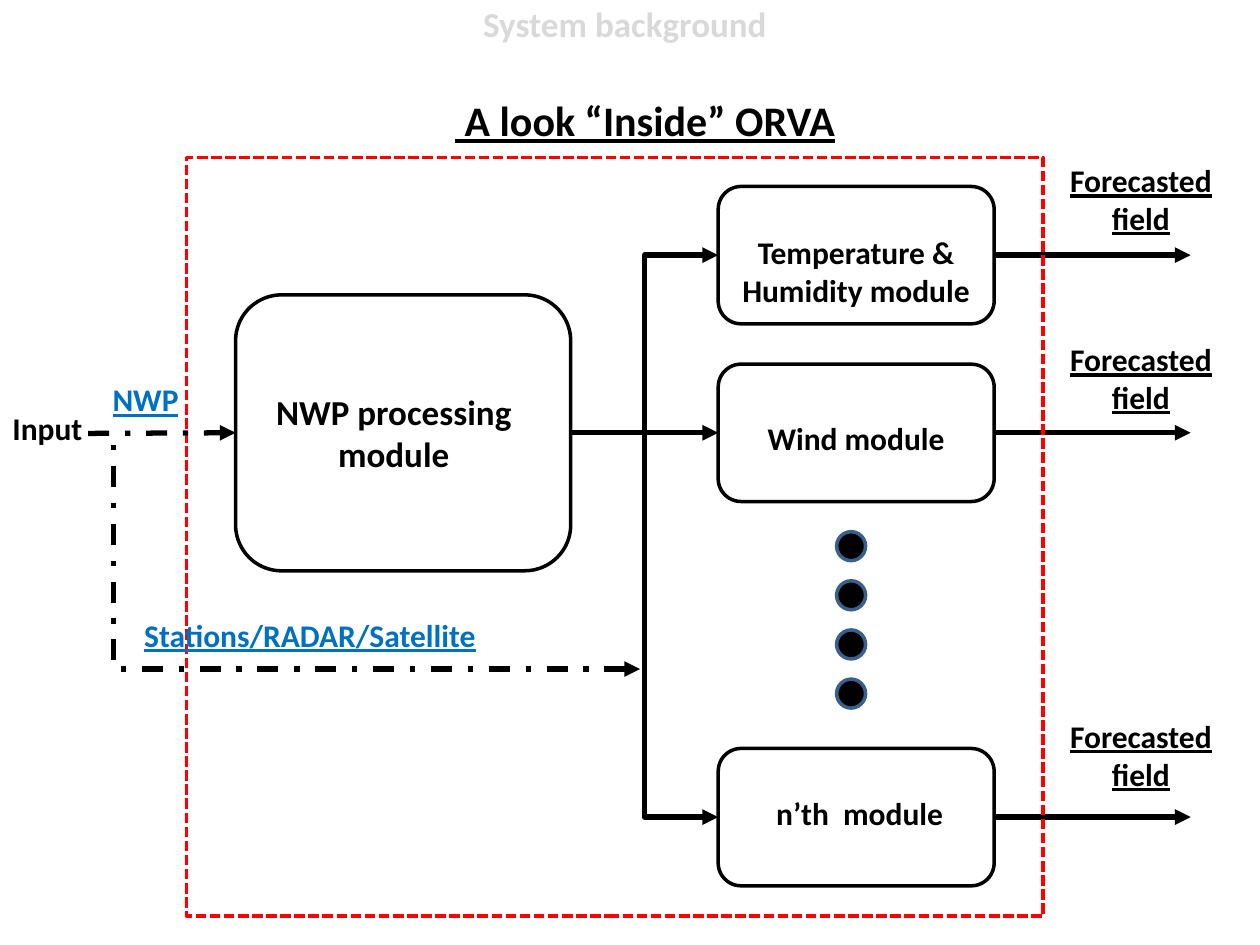
import pptx
import pptx.util
import pptx.dml.color
import pptx.enum.dml
import pptx.enum.shapes
import pptx.enum.text
import pptx.oxml
import pptx.oxml.ns
from pptx.util import Inches

SHAPE = pptx.enum.shapes.MSO_SHAPE
CONNECTOR = pptx.enum.shapes.MSO_CONNECTOR
DASH = pptx.enum.dml.MSO_LINE
ALIGN = pptx.enum.text.PP_ALIGN

THEME = {
    "font": "Calibri",
    "ink": "000000", "paper": "FFFFFF", "input": "0070C0",
    "frame": "FF0000", "dot_edge": "3A5F8C", "header": "D9D9D9",
    "title_size": 24, "large": 20, "body": 18,
    "outline": 2, "arrow": 3,
}

# Text, then left, top, width, height in inches
TITLE = (" A look “Inside” ORVA", (3.01, 0.7, 4.22, 0.5))
HEADER = ("System background", (3.11, -0.03, 3.7, 0.44))
PROCESSING = ("NWP processing module", (2.03, 3.05, 2.19, 0.77))
INPUT = ("Input", (0, 3.2, 0.78, 0.4))
SOURCES = [
    ("Stations/RADAR/Satellite", (0.7, 4.84, 3.52, 0.4)),
    ("NWP", (0.78, 2.97, 0.75, 0.4)),
]
# Text, box top, label top, label height, top of the output label
MODULES = [
    ("Temperature & Humidity module ", 1.48, 1.8, 0.71, 1.23),
    ("Wind module", 2.89, 3.28, 0.4, 2.65),
    (" n’th  module", 5.94, 6.25, 0.4, 5.64),
]
OUTPUT = "Forecasted field"

PROCESSING_BOX = (1.87, 2.34, 2.66, 2.19)
FRAME = (1.48, 1.25, 6.8, 6.02)
MODULE_LEFT, MODULE_WIDTH, MODULE_HEIGHT = 5.7, 2.19, 1.09
LABEL_LEFT, LABEL_WIDTH = 5.78, 2.03
OUTPUT_LEFT, OUTPUT_WIDTH, OUTPUT_HEIGHT = 8.39, 1.33, 0.71
OUTPUT_END = 9.45
INPUT_START = (0.7, 3.44)
STATIONS_END = (5.08, 5.31)
STATIONS_BEND = 0.046
DOT_LEFT, DOT_TOP, DOT_SIZE, DOT_STEP, DOT_COUNT = 6.64, 4.22, 0.23, 0.39, 4
LEFT_SITE, RIGHT_SITE = 1, 3


def color(name):
    return pptx.dml.color.RGBColor.from_string(THEME[name])


def inches(values):
    return [Inches(value) for value in values]


def add_box(slide, kind, area, fill, line, dash=None):
    shape = slide.shapes.add_shape(kind, *inches(area))
    shape.shadow.inherit = False
    if fill:
        shape.fill.solid()
        shape.fill.fore_color.rgb = color(fill)
    else:
        shape.fill.background()
    shape.line.color.rgb = color(line)
    shape.line.width = pptx.util.Pt(THEME["outline"])
    if dash:
        shape.line.dash_style = dash
    return shape


def write(shape, text, size="body", ink="ink", underline=False, align=ALIGN.CENTER):
    frame = shape.text_frame
    frame.word_wrap = True
    frame.auto_size = pptx.enum.text.MSO_AUTO_SIZE.NONE
    frame.vertical_anchor = pptx.enum.text.MSO_ANCHOR.TOP
    paragraph = frame.paragraphs[0]
    paragraph.alignment = align
    run = paragraph.add_run()
    run.text = text
    run.font.name = THEME["font"]
    run.font.size = pptx.util.Pt(THEME[size])
    run.font.color.rgb = color(ink)
    run.font.bold = True
    run.font.underline = underline


def add_label(slide, text, area, **style):
    write(slide.shapes.add_textbox(*inches(area)), text, **style)


def add_arrow(slide, kind, start, end, dash=None):
    arrow = slide.shapes.add_connector(kind, *inches(start + end))
    arrow.line.color.rgb = color("ink")
    arrow.line.width = pptx.util.Pt(THEME["arrow"])
    if dash:
        arrow.line.dash_style = dash
    line = arrow.line._get_or_add_ln()
    line.append(pptx.oxml.parse_xml(
        f'<a:tailEnd {pptx.oxml.ns.nsdecls("a")} type="triangle"/>'))
    arrow._element.spPr.append(pptx.oxml.parse_xml(
        f'<a:effectLst {pptx.oxml.ns.nsdecls("a")}/>'))
    return arrow


def set_bend(arrow, share):
    """Place the elbow at a share of the connector's width."""
    geometry = arrow._element.spPr.find(pptx.oxml.ns.qn("a:prstGeom"))
    guides = geometry.find(pptx.oxml.ns.qn("a:avLst"))
    guides.append(pptx.oxml.parse_xml(
        f'<a:gd {pptx.oxml.ns.nsdecls("a")} name="adj1" '
        f'fmla="val {round(share * 100000)}"/>'))


def add_modules(slide, processing):
    processing_right = PROCESSING_BOX[0] + PROCESSING_BOX[2]
    module_right = MODULE_LEFT + MODULE_WIDTH
    for text, top, label_top, label_height, output_top in MODULES:
        middle = top + MODULE_HEIGHT / 2
        module = add_box(slide, SHAPE.ROUNDED_RECTANGLE,
                         (MODULE_LEFT, top, MODULE_WIDTH, MODULE_HEIGHT),
                         "paper", "ink")
        feed = add_arrow(slide, CONNECTOR.ELBOW, (processing_right, INPUT_START[1]),
                         (MODULE_LEFT, middle))
        feed.begin_connect(processing, RIGHT_SITE)
        feed.end_connect(module, LEFT_SITE)
        add_label(slide, text, (LABEL_LEFT, label_top, LABEL_WIDTH, label_height))
        result = add_arrow(slide, CONNECTOR.STRAIGHT, (module_right, middle),
                           (OUTPUT_END, middle))
        result.begin_connect(module, RIGHT_SITE)
        add_label(slide, OUTPUT,
                  (OUTPUT_LEFT, output_top, OUTPUT_WIDTH, OUTPUT_HEIGHT),
                  underline=True)


def add_inputs(slide, processing):
    direct = add_arrow(slide, CONNECTOR.STRAIGHT, INPUT_START,
                       (PROCESSING_BOX[0], INPUT_START[1]), DASH.DASH_DOT)
    direct.end_connect(processing, LEFT_SITE)
    stations = add_arrow(slide, CONNECTOR.ELBOW, INPUT_START, STATIONS_END,
                         DASH.DASH_DOT)
    set_bend(stations, STATIONS_BEND)
    for text, area in SOURCES:
        add_label(slide, text, area, ink="input", underline=True)
    add_label(slide, *INPUT, align=ALIGN.LEFT)


def main():
    presentation = pptx.Presentation()
    presentation.slide_width, presentation.slide_height = Inches(10), Inches(7.5)
    slide = presentation.slides.add_slide(presentation.slide_layouts[5])

    title_text, title_area = TITLE
    title = slide.shapes.title
    title.left, title.top, title.width, title.height = inches(title_area)
    write(title, title_text, size="title_size", underline=True)
    add_label(slide, *HEADER, size="large", ink="header")

    processing = add_box(slide, SHAPE.ROUNDED_RECTANGLE, PROCESSING_BOX,
                         "paper", "ink")
    add_label(slide, *PROCESSING, size="large")
    add_modules(slide, processing)
    for index in range(DOT_COUNT):
        top = DOT_TOP + index * DOT_STEP
        add_box(slide, SHAPE.OVAL, (DOT_LEFT, top, DOT_SIZE, DOT_SIZE),
                "ink", "dot_edge")
    add_box(slide, SHAPE.RECTANGLE, FRAME, None, "frame", DASH.SQUARE_DOT)
    add_inputs(slide, processing)
    presentation.save("out.pptx")


if __name__ == "__main__":
    main()
